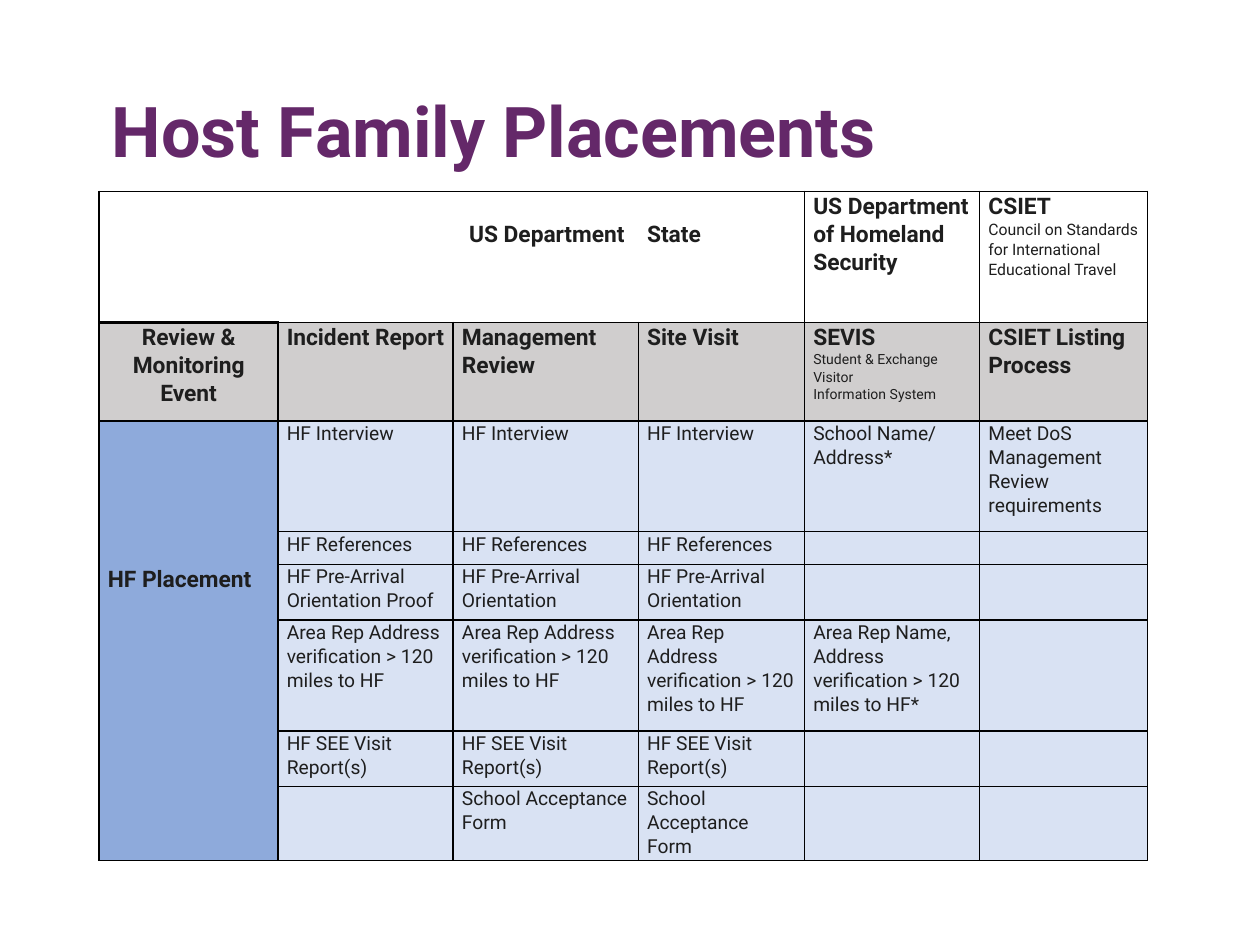
import dataclasses

import pptx
import pptx.dml.color
import pptx.enum.text
import pptx.oxml
import pptx.oxml.ns
import pptx.util

Pt = pptx.util.Pt
Align = pptx.enum.text.PP_ALIGN


@dataclasses.dataclass(frozen=True)
class Theme:
    font: str = "Roboto"
    title: str = "642869"
    ink: str = "1E1E1E"
    border: str = "000000"
    agency: str = "FFFFFF"
    event: str = "D0CECE"
    placement: str = "8EAADB"
    requirement: str = "D9E2F3"
    title_size: int = 40
    heading_size: int = 13
    body_size: int = 11
    agency_note_size: int = 9
    event_note_size: int = 8
    line_spacing: float = 1.07


THEME = Theme()
AGENCY_COLUMNS = 4

COLUMN_WIDTHS = [102.2, 100.1, 105.8, 95, 100.1, 95.8]
ROW_HEIGHTS = [74.9, 56.2, 63.4, 18.7, 31.7, 63.4, 31.7, 31.7]

AGENCIES = ["", "", "US Department", "State",
            "US Department of Homeland Security",
            "CSIET\nCouncil on Standards for International Educational Travel"]
EVENTS = ["Review & Monitoring\nEvent", "Incident Report", "Management Review", "Site Visit",
          "SEVIS\nStudent & Exchange Visitor\nInformation System", "CSIET Listing Process"]
AREA_REP = "Area Rep Address verification > 120 miles to HF"
REQUIREMENTS = [
    ["", *["HF Interview"] * 3, "School Name/\nAddress*",
     "Meet DoS Management Review requirements"],
    ["", *["HF References"] * 3, "", ""],
    ["HF Placement", "HF Pre-Arrival Orientation Proof",
     *["HF Pre-Arrival Orientation"] * 2, "", ""],
    ["", *[AREA_REP] * 3, "Area Rep Name, Address verification > 120 miles to HF*", ""],
    ["", *["HF SEE Visit Report(s)"] * 3, "", ""],
    ["", "", *["School Acceptance Form"] * 2, "", ""],
]


def write(frame, text, size, color=THEME.ink, bold=False, align=Align.LEFT,
          spacing=THEME.line_spacing, note_size=None):
    for index, line in enumerate(text.split("\n")):
        paragraph = frame.paragraphs[0] if index == 0 else frame.add_paragraph()
        paragraph.alignment = align
        paragraph.line_spacing = spacing
        if not line:
            paragraph._p.append(pptx.oxml.parse_xml(
                f'<a:endParaRPr {pptx.oxml.ns.nsdecls("a")} sz="{size * 100}"/>'))
            continue
        is_note = note_size is not None and index > 0
        run = paragraph.add_run()
        run.text = line
        run.font.name = THEME.font
        run.font.size = Pt(note_size if is_note else size)
        run.font.bold = bold and not is_note
        run.font.color.rgb = pptx.dml.color.RGBColor.from_string(color)


def cell_format(row, column):
    if row == 0:
        return THEME.agency, dict(size=THEME.heading_size, bold=True,
                                  note_size=THEME.agency_note_size if column == 5 else None,
                                  align=Align.RIGHT if column == 2 else Align.LEFT)
    if row == 1:
        return THEME.event, dict(size=THEME.heading_size, bold=True,
                                 note_size=THEME.event_note_size if column == 4 else None,
                                 align=Align.CENTER if column == 0 else Align.LEFT)
    if column == 0:
        return THEME.placement, dict(size=THEME.heading_size, bold=True)
    return THEME.requirement, dict(size=THEME.body_size)


def cell_borders(row, column):
    widths = dict(L=1, R=1, T=1, B=1)
    if row == 0 and column < AGENCY_COLUMNS:
        if column > 0:
            widths["L"] = 0
        if column < AGENCY_COLUMNS - 1:
            widths["R"] = 0
    if column == 0:
        if row > 2:
            widths["T"] = 0
        if 2 <= row < len(ROW_HEIGHTS) - 1:
            widths["B"] = 0
        if row in (1, 2):
            widths["T"] = 1.5
        if row in (0, 1):
            widths["B"] = 1.5
    return widths


class Deck:
    def __init__(self, theme):
        self.theme = theme
        self.presentation = pptx.Presentation()
        self.presentation.slide_width = Pt(720)
        self.presentation.slide_height = Pt(540)
        self.slide = self.presentation.slides.add_slide(self.presentation.slide_layouts[6])

    def title(self, text, left, top, width, height):
        frame = self.slide.shapes.add_textbox(Pt(left), Pt(top), Pt(width), Pt(height)).text_frame
        frame.word_wrap = True
        frame.margin_top, frame.margin_bottom = Pt(6), 0
        write(frame, text, self.theme.title_size, color=self.theme.title, bold=True, spacing=1.0)

    def border(self, cell, side, width):
        paint = (f'<a:solidFill><a:srgbClr val="{self.theme.border}"/></a:solidFill>'
                 if width else "<a:noFill/>")
        cell._tc.get_or_add_tcPr().append(pptx.oxml.parse_xml(
            f'<a:ln{side} {pptx.oxml.ns.nsdecls("a")} w="{int(Pt(width))}">{paint}</a:ln{side}>'))

    def table(self, contents, left, top, widths, heights):
        table = self.slide.shapes.add_table(
            len(heights), len(widths), Pt(left), Pt(top),
            Pt(sum(widths)), Pt(sum(heights))).table
        table.first_row = table.horz_banding = False
        for column, width in zip(table.columns, widths):
            column.width = Pt(width)
        for row, height in zip(table.rows, heights):
            row.height = Pt(height)
        for row, texts in enumerate(contents):
            for column, text in enumerate(texts):
                cell = table.cell(row, column)
                fill, text_format = cell_format(row, column)
                cell.margin_left = Pt(5)
                cell.margin_right = Pt(8 if (row, column) == (0, 2) else 5)
                cell.margin_top = Pt(16 if row == 0 and column in (2, 3) else 0)
                cell.margin_bottom = 0
                for side, width in cell_borders(row, column).items():
                    self.border(cell, side, width)
                cell.fill.solid()
                cell.fill.fore_color.rgb = pptx.dml.color.RGBColor.from_string(fill)
                write(cell.text_frame, text, **text_format)


def main():
    deck = Deck(THEME)
    deck.title("Host Family Placements", 56.9, 44, 612, 48)
    deck.table([AGENCIES, EVENTS, *REQUIREMENTS], 56.7, 109.4, COLUMN_WIDTHS, ROW_HEIGHTS)
    deck.presentation.save("out.pptx")


if __name__ == "__main__":
    main()
